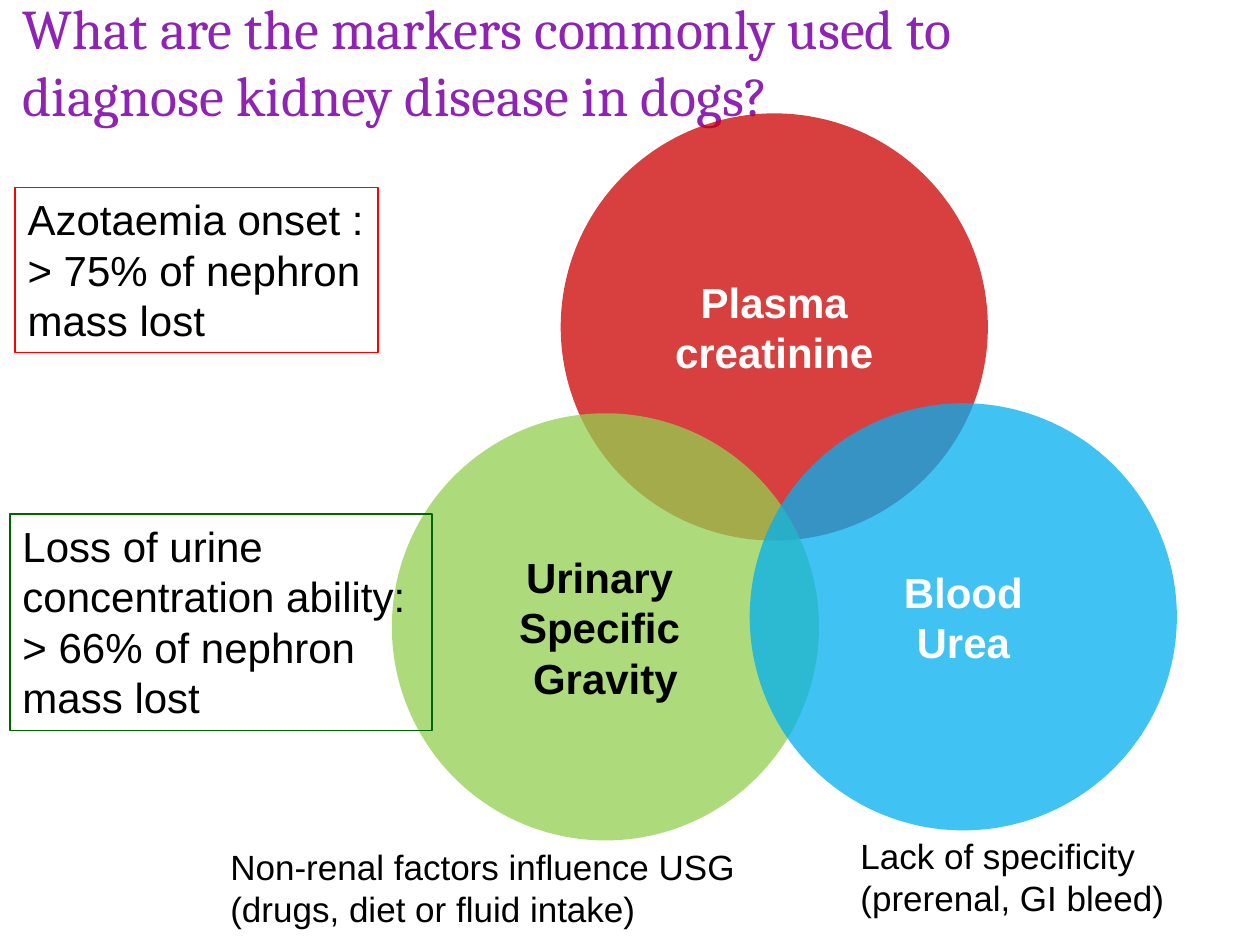
"""Build the slide on the markers of kidney disease in dogs."""
import lxml.etree
import pptx
import pptx.dml.color
import pptx.enum.shapes
import pptx.enum.text
import pptx.oxml.ns
import pptx.util

ANCHOR = pptx.enum.text.MSO_ANCHOR
ALIGN = pptx.enum.text.PP_ALIGN
SHAPE = pptx.enum.shapes.MSO_SHAPE

deck = pptx.Presentation()
deck.slide_width = pptx.util.Inches(10)
deck.slide_height = pptx.util.Inches(7.5)
slide = deck.slides.add_slide(deck.slide_layouts[6])
column = deck.slide_width / 100
row = deck.slide_height / 75


def color(hex_code):
    return pptx.dml.color.RGBColor.from_string(hex_code)


def add_text(preset, place, text, size, ink="000000", font="Arial", bold=False,
             align=ALIGN.LEFT, anchor=ANCHOR.TOP):
    left, top, width, height = place
    box = [round(n) for n in (left * column, top * row, width * column, height * row)]
    if preset is None:
        shape = slide.shapes.add_textbox(*box)
    else:
        shape = slide.shapes.add_shape(preset, *box)
        shape.shadow.inherit = False
    frame = shape.text_frame
    frame.text = text
    frame.word_wrap = True
    frame.vertical_anchor = anchor
    for paragraph in frame.paragraphs:
        paragraph.alignment = align
        for run in paragraph.runs:
            run.font.name = font
            run.font.size = pptx.util.Pt(size)
            run.font.bold = bold
            run.font.color.rgb = color(ink)
    return shape


add_text(None, (0.8, -1.1, 84.2, 11.8),
         "What are the markers commonly used to diagnose kidney disease in dogs?",
         32, "8F23B3", "Cambria", anchor=ANCHOR.MIDDLE)

diameter = 33.9
markers = [
    (44.5, 9, "CC0000", "FFFFFF", "Plasma creatinine"),
    (31.1, 32.8, "92D050", "000000", "Urinary \nSpecific \nGravity"),
    (59.5, 32, "00B0F0", "FFFFFF", "Blood\nUrea"),
]
for left, top, tint, ink, marker in markers:
    circle = add_text(SHAPE.OVAL, (left, top, diameter, diameter), marker, 24, ink,
                      bold=True, align=ALIGN.CENTER, anchor=ANCHOR.MIDDLE)
    circle.fill.solid()
    circle.fill.fore_color.rgb = color(tint)
    circle.line.fill.background()
    tint_xml = circle.fill._xPr.find(".//" + pptx.oxml.ns.qn("a:srgbClr"))
    lxml.etree.SubElement(tint_xml, pptx.oxml.ns.qn("a:alpha"), val="75000")

limitations = [
    ((17.3, 66.6, 50, 7.7), "Non-renal factors influence USG\n(drugs, diet or fluid intake)"),
    ((67.3, 65.7, 29.1, 7.7), "Lack of specificity\n(prerenal, GI bleed)"),
]
for place, limitation in limitations:
    add_text(None, place, limitation, 20)

thresholds = [
    ((1.2, 14.9, 28.8, 13.1), "FF0000", "Azotaemia onset :\n> 75% of nephron mass lost"),
    ((0.8, 40.8, 33.5, 17.2), "006600",
     "Loss of urine concentration ability: > 66% of nephron mass lost"),
]
for place, border, threshold in thresholds:
    framed = add_text(SHAPE.RECTANGLE, place, threshold, 24)
    framed.fill.background()
    framed.line.color.rgb = color(border)
    framed.line.width = pptx.util.Pt(0.75)

deck.save("out.pptx")
